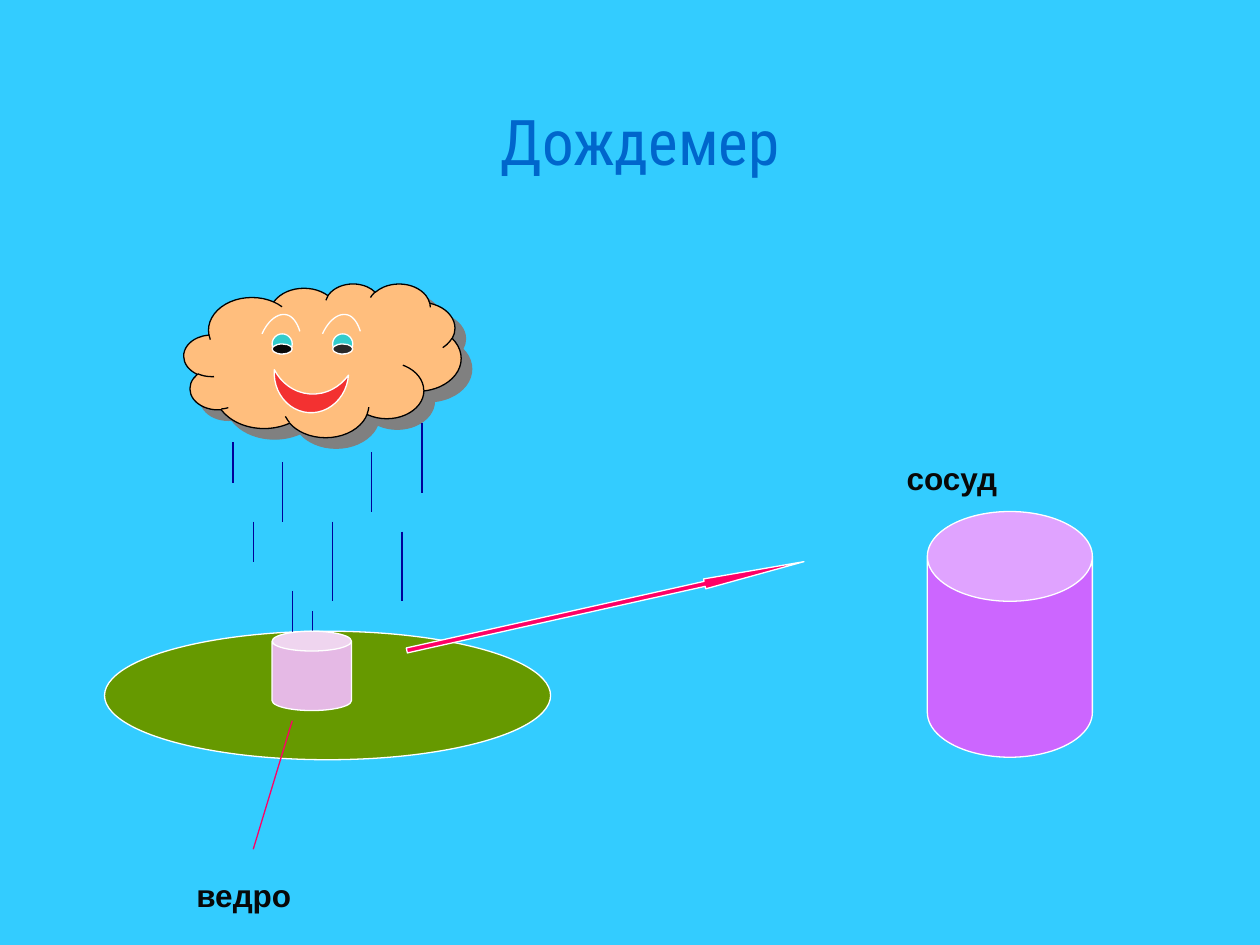
from typing import NamedTuple, Optional

from lxml.etree import SubElement
from pptx import Presentation
from pptx.dml.color import RGBColor
from pptx.enum.shapes import MSO_CONNECTOR, MSO_SHAPE
from pptx.enum.text import MSO_ANCHOR, MSO_AUTO_SIZE, PP_ALIGN
from pptx.oxml import parse_xml
from pptx.oxml.ns import nsdecls, qn
from pptx.util import Inches, Pt

SKY = RGBColor(0x33, 0xCC, 0xFF)
TITLE_BLUE = RGBColor(0x00, 0x66, 0xCC)
INK = RGBColor(0x08, 0x08, 0x08)
RIGHT_PUPIL = RGBColor(0x29, 0x29, 0x29)
WHITE = RGBColor(0xFF, 0xFF, 0xFF)
BLACK = RGBColor(0x00, 0x00, 0x00)
GRASS = RGBColor(0x66, 0x99, 0x00)
PEACH = RGBColor(0xFF, 0xBE, 0x7D)
RAIN = RGBColor(0x00, 0x00, 0x99)
LIPS = RGBColor(0xF3, 0x31, 0x31)
IRIS = RGBColor(0x33, 0xCC, 0xCC)
BUCKET = RGBColor(0xE5, 0xB9, 0xE5)
VESSEL = RGBColor(0xCC, 0x66, 0xFF)
POINTER = RGBColor(0xFF, 0x00, 0x66)
LINE_WIDTH = Pt(0.75)
EYE_GAP = 0.48

# Two cubic curves that share their middle point
BROW_CURVES = (
    ((2.38, 2.63), (2.36, 2.56), (2.32, 2.51), (2.28, 2.50)),
    ((2.28, 2.50), (2.21, 2.48), (2.13, 2.54), (2.08, 2.65)),
)


class Figure(NamedTuple):
    kind: MSO_SHAPE
    left: float
    top: float
    width: float
    height: float
    fill: RGBColor
    line: RGBColor = WHITE
    rotation: float = 0
    adjustments: tuple = ()


class Drop(NamedTuple):
    x: float
    top: float
    bottom: float


DROPS = (
    Drop(1.85, 3.51, 3.83), Drop(2.24, 3.67, 4.14), Drop(2.95, 3.59, 4.06),
    Drop(3.35, 3.36, 3.91), Drop(2.01, 4.14, 4.46), Drop(2.64, 4.14, 4.77),
    Drop(3.19, 4.22, 4.77), Drop(2.32, 4.69, 5.17), Drop(2.48, 4.85, 5.09),
)


def draw_figure(page, figure: Figure):
    shape = page.shapes.add_shape(
        figure.kind, Inches(figure.left), Inches(figure.top),
        Inches(figure.width), Inches(figure.height))
    shape.shadow.inherit = False
    shape.fill.solid()
    shape.fill.fore_color.rgb = figure.fill
    shape.line.color.rgb = figure.line
    shape.line.width = LINE_WIDTH
    shape.rotation = figure.rotation
    for index, value in enumerate(figure.adjustments):
        shape.adjustments[index] = value
    return shape


def draw_line(page, start: tuple, end: tuple, color: RGBColor) -> None:
    line = page.shapes.add_connector(
        MSO_CONNECTOR.STRAIGHT, *map(Inches, start), *map(Inches, end))
    line.line.color.rgb = color
    line.line.width = LINE_WIDTH
    SubElement(line._element.spPr, qn("a:effectLst"))


def add_offset_shadow(shape) -> None:
    properties = shape._element.spPr
    properties.remove(properties.find(qn("a:effectLst")))
    properties.append(parse_xml(
        f'<a:effectLst {nsdecls("a")}>'
        f'<a:outerShdw dist="{Pt(8.5)}" dir="2700000" algn="ctr" rotWithShape="0">'
        '<a:srgbClr val="808080"/></a:outerShdw></a:effectLst>'))


def curve_point(curve: tuple, t: float) -> tuple:
    weights = ((1 - t) ** 3, 3 * t * (1 - t) ** 2, 3 * t * t * (1 - t), t ** 3)
    return tuple(sum(w * point[axis] for w, point in zip(weights, curve))
                 for axis in (0, 1))


def draw_brow(page, shift: float, steps: int = 12) -> None:
    points = [curve_point(curve, step / steps)
              for curve in BROW_CURVES for step in range(steps + 1)]
    points = [(Inches(x + shift), Inches(y)) for x, y in points]
    builder = page.shapes.build_freeform(*points[0])
    builder.add_line_segments(points[1:], close=False)
    brow = builder.convert_to_shape()
    brow.shadow.inherit = False
    brow.fill.background()
    brow.line.color.rgb = WHITE
    brow.line.width = LINE_WIDTH


def write_text(box, text: str, *, font: str, size: float, color: RGBColor,
               bold: bool = False, wrap: bool = True,
               align: Optional[PP_ALIGN] = None) -> None:
    frame = box.text_frame
    frame.auto_size = MSO_AUTO_SIZE.NONE
    frame.word_wrap = wrap
    frame.vertical_anchor = MSO_ANCHOR.TOP
    para = frame.paragraphs[0]
    para.alignment = align
    span = para.add_run()
    span.text = text
    span.font.name = font
    span.font.size = Pt(size)
    span.font.bold = bold
    span.font.color.rgb = color


def add_label(page, text: str, left: float, top: float, width: float,
              align: PP_ALIGN) -> None:
    box = page.shapes.add_textbox(
        Inches(left), Inches(top), Inches(width), Inches(0.4))
    write_text(box, text, font="Arial", size=18, color=INK, bold=True, align=align)


def main() -> None:
    deck = Presentation()
    deck.slide_width, deck.slide_height = Inches(10), Inches(7.5)
    page = deck.slides.add_slide(deck.slide_layouts[5])
    page.background.fill.solid()
    page.background.fill.fore_color.rgb = SKY

    # Title
    title = page.shapes.title
    title.left, title.top = Inches(3.66), Inches(0.76)
    title.width, title.height = Inches(2.84), Inches(0.62)
    write_text(title, "Дождемер", font="Roboto Condensed", size=36,
               color=TITLE_BLUE, wrap=False, align=PP_ALIGN.CENTER)

    # Meadow, cloud and rain
    draw_figure(page, Figure(MSO_SHAPE.OVAL, 0.83, 5.01, 3.54, 1.02, GRASS))
    cloud = draw_figure(
        page, Figure(MSO_SHAPE.CLOUD, 1.46, 2.25, 2.2, 1.22, PEACH, BLACK))
    add_offset_shadow(cloud)
    for drop in DROPS:
        draw_line(page, (drop.x, drop.top), (drop.x, drop.bottom), RAIN)

    # Face
    draw_figure(page, Figure(MSO_SHAPE.MOON, 2.3, 2.82, 0.32, 0.59, LIPS,
                             rotation=274.2, adjustments=(0.464,)))
    for shift, pupil in ((0, INK), (EYE_GAP, RIGHT_PUPIL)):
        left = 2.16 + shift
        draw_figure(page, Figure(MSO_SHAPE.OVAL, left, 2.65, 0.16, 0.16, IRIS))
        draw_figure(page, Figure(MSO_SHAPE.OVAL, left, 2.73, 0.16, 0.08, pupil))
        draw_brow(page, shift)

    # Bucket and vessel
    draw_figure(page, Figure(MSO_SHAPE.CAN, 2.16, 5.01, 0.63, 0.63, BUCKET,
                             adjustments=(0.25,)))
    draw_figure(page, Figure(MSO_SHAPE.CAN, 7.36, 4.06, 1.31, 1.95, VESSEL,
                             adjustments=(0.544,)))

    # Pointers and labels
    draw_figure(page, Figure(MSO_SHAPE.RIGHT_ARROW, 3.19, 4.77, 3.23, 0.08, POINTER,
                             rotation=347.4, adjustments=(0.5, 10.11)))
    draw_line(page, (2.01, 6.74), (2.32, 5.72), POINTER)
    add_label(page, "ведро", 1.46, 6.9, 1.42, PP_ALIGN.LEFT)
    add_label(page, "сосуд", 6.73, 3.59, 1.65, PP_ALIGN.CENTER)

    deck.save("out.pptx")


if __name__ == "__main__":
    main()
